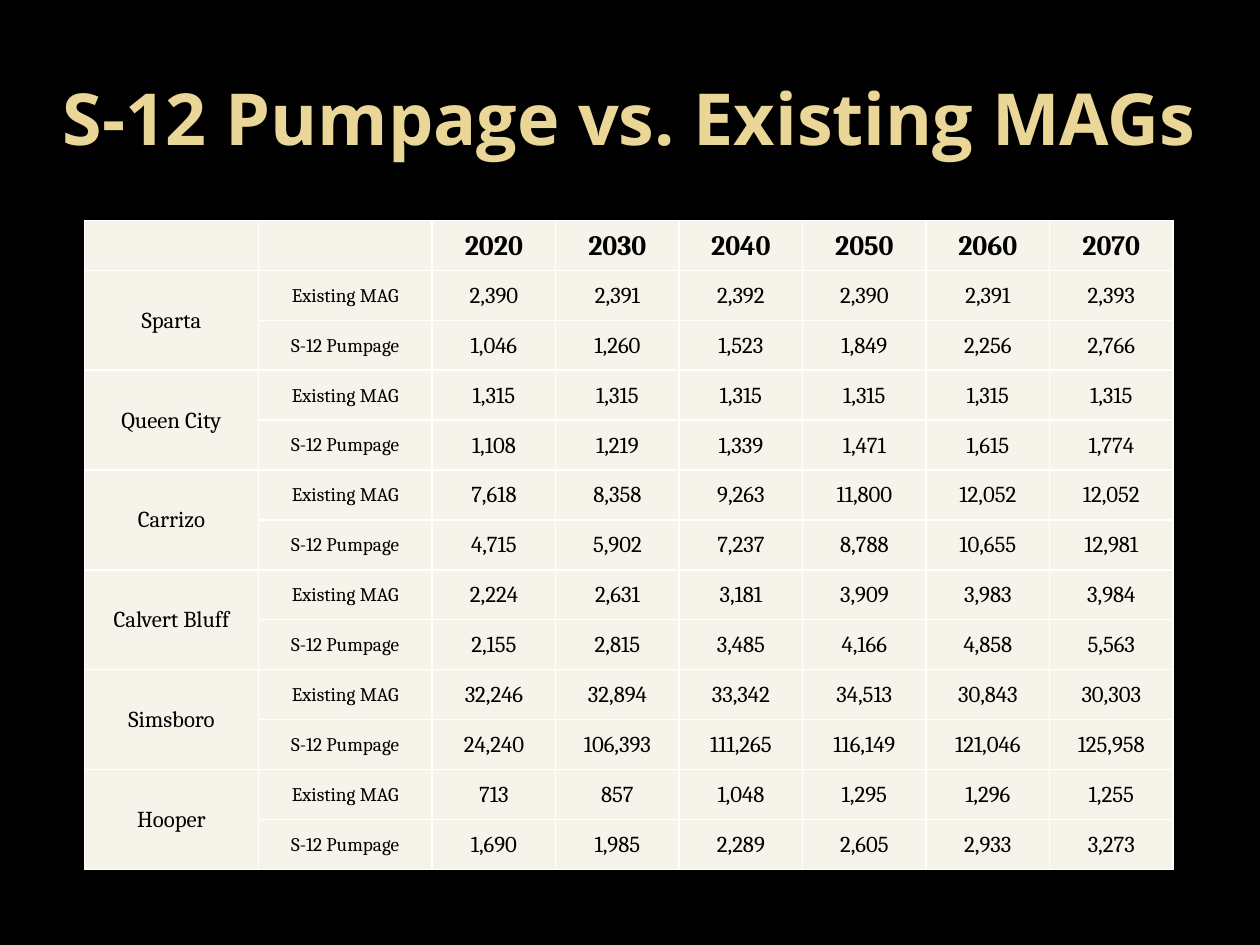
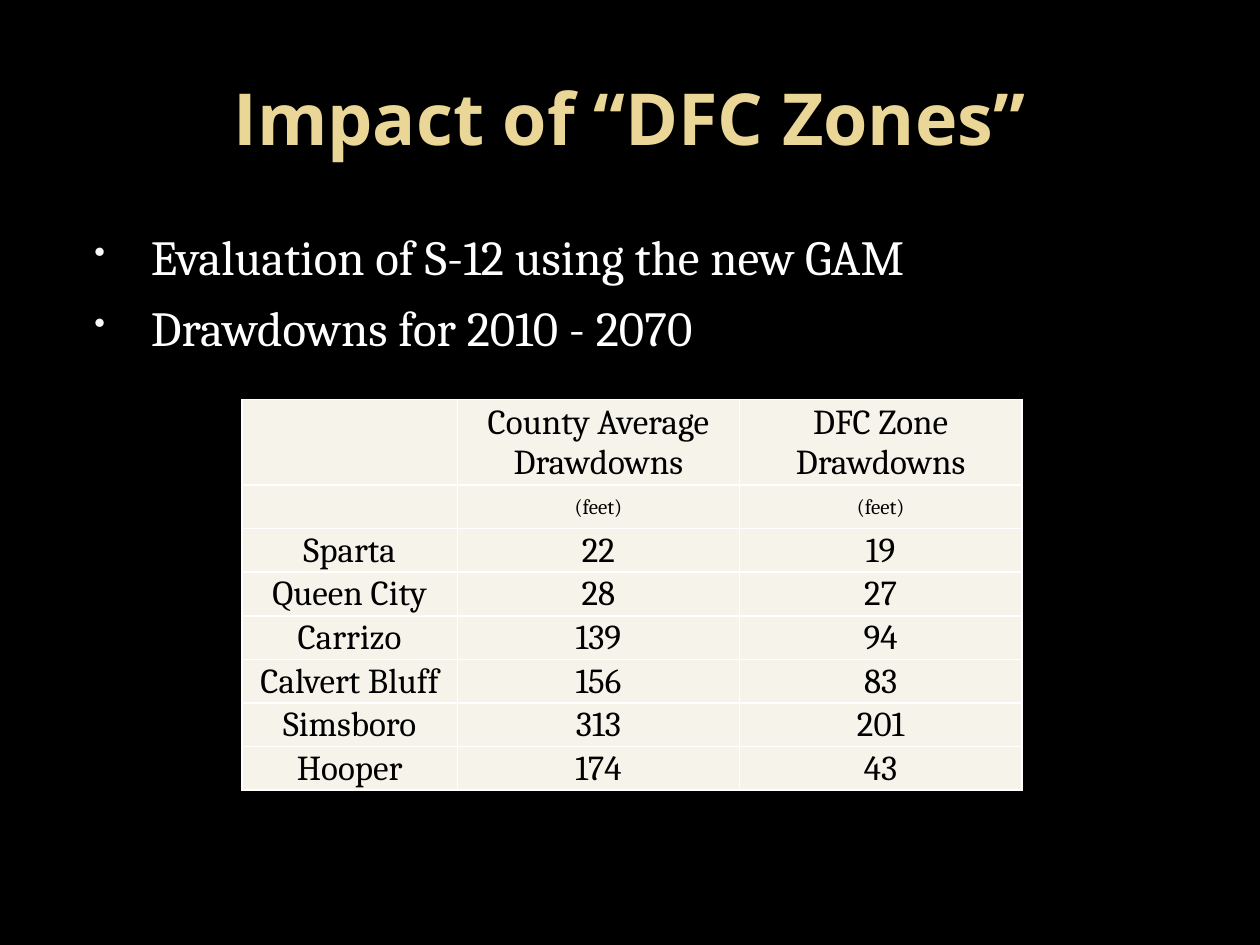
from dataclasses import dataclass

from lxml import etree
from pptx import Presentation
from pptx.dml.color import RGBColor
from pptx.enum.text import MSO_ANCHOR, PP_ALIGN
from pptx.oxml.ns import qn
from pptx.util import Inches, Pt

MIDDLE = MSO_ANCHOR.MIDDLE
CENTER = PP_ALIGN.CENTER


@dataclass(frozen=True)
class Theme:
    back: str = "000000"
    gold: str = "EAD696"
    white: str = "FFFFFF"
    dot: str = "F9F9F9"
    ink: str = "000000"
    cream: str = "F6F3EA"
    head: str = "Open Sans"
    body: str = "Cambria"
    title: int = 41
    point: int = 28
    large: int = 20
    year: int = 16
    value: int = 13
    unit: int = 12
    label: int = 11


theme = Theme()


def write(para, text, size, color, name=theme.body, bold=False):
    run = para.add_run()
    run.text = text
    for key, val in {"size": Pt(size), "name": name, "bold": bold}.items():
        setattr(run.font, key, val)
    run.font.color.rgb = RGBColor.from_string(color)


def grid(slide, rows, sizes, left, top, widths, heights):
    box = [Inches(n) for n in (left, top, sum(widths), sum(heights))]
    table = slide.shapes.add_table(len(rows), len(widths), *box).table
    table.first_row = table.horz_banding = False
    for col, width in zip(table.columns, widths):
        col.width = Inches(width)
    for line, height in zip(table.rows, heights):
        line.height = Inches(height)
    pad = Inches(0.01)
    form = {"margin_left": pad, "margin_top": pad, "margin_right": pad,
            "margin_bottom": 0, "vertical_anchor": MIDDLE}
    for r, row in enumerate(rows):
        for c, text in enumerate(row):
            cell = table.cell(r, c)
            for key, val in form.items():
                setattr(cell, key, val)
            props = cell._tc.get_or_add_tcPr()
            for side in ("lnL", "lnR", "lnT", "lnB"):
                edge = etree.SubElement(props, qn(f"a:{side}"), w=str(Pt(1)))
                fill = etree.SubElement(edge, qn("a:solidFill"))
                etree.SubElement(fill, qn("a:srgbClr"), val=theme.white)
            cell.fill.solid()
            cell.fill.fore_color.rgb = RGBColor.from_string(theme.cream)
            para = cell.text_frame.paragraphs[0]
            para.alignment = CENTER
            if text:
                size = sizes(r, c)
                write(para, text, size, theme.ink, bold=size == theme.year)
    return table


deck = Presentation()
deck.slide_width, deck.slide_height = Inches(10), Inches(7.5)

slides = []
for text, left in (("S-12 Pumpage vs. Existing MAGs", 0), ("Impact of “DFC Zones”", 0.5)):
    slide = deck.slides.add_slide(deck.slide_layouts[6])
    slide.background.fill.solid()
    slide.background.fill.fore_color.rgb = RGBColor.from_string(theme.back)
    box = slide.shapes.add_textbox(Inches(left), Inches(0.3), Inches(10 - 2 * left), Inches(1.25))
    frame = box.text_frame
    frame.word_wrap = True
    frame.vertical_anchor = MIDDLE
    para = frame.paragraphs[0]
    para.alignment = CENTER
    write(para, text, theme.title, theme.gold, theme.head, True)
    slides.append(slide)
pump, zone = slides

flows = {
    "Sparta": ("2,390 2,391 2,392 2,390 2,391 2,393", "1,046 1,260 1,523 1,849 2,256 2,766"),
    "Queen City": ("1,315 1,315 1,315 1,315 1,315 1,315", "1,108 1,219 1,339 1,471 1,615 1,774"),
    "Carrizo": ("7,618 8,358 9,263 11,800 12,052 12,052", "4,715 5,902 7,237 8,788 10,655 12,981"),
    "Calvert Bluff": ("2,224 2,631 3,181 3,909 3,983 3,984", "2,155 2,815 3,485 4,166 4,858 5,563"),
    "Simsboro": ("32,246 32,894 33,342 34,513 30,843 30,303",
                 "24,240 106,393 111,265 116,149 121,046 125,958"),
    "Hooper": ("713 857 1,048 1,295 1,296 1,255", "1,690 1,985 2,289 2,605 2,933 3,273"),
}
rows = [["", "", *(str(year) for year in range(2020, 2080, 10))]]
for name, (mags, pumps) in flows.items():
    rows.append([name, "Existing MAG", *mags.split()])
    rows.append(["", "S-12 Pumpage", *pumps.split()])
table = grid(pump, rows,
             lambda r, c: theme.year if r == 0 else theme.label if c == 1 else theme.value,
             0.67, 1.75, [1.38] * 2 + [0.98] * 6, [5.15 / len(rows)] * len(rows))
for r in range(1, len(rows), 2):
    table.cell(r, 0).merge(table.cell(r + 1, 0))

box = zone.shapes.add_textbox(Inches(0.5), Inches(1.75), Inches(9), Inches(5.15))
frame = box.text_frame
frame.word_wrap = True
points = ("Evaluation of S-12 using the new GAM", "Drawdowns for 2010 - 2070")
for n, text in enumerate(points):
    para = frame.add_paragraph() if n else frame.paragraphs[0]
    para.space_before = Pt(6.6)
    props = para._p.get_or_add_pPr()
    props.set("marL", str(Inches(0.6)))
    props.set("indent", str(Inches(-0.45)))
    tint = etree.SubElement(props, qn("a:buClr"))
    etree.SubElement(tint, qn("a:srgbClr"), val=theme.dot)
    etree.SubElement(props, qn("a:buSzPct"), val="65000")
    etree.SubElement(props, qn("a:buChar"), char="•")
    write(para, text, theme.point, theme.white)

drops = [
    ("", "County Average Drawdowns", "DFC Zone Drawdowns"),
    ("", "(feet)", "(feet)"),
    ("Sparta", "22", "19"),
    ("Queen City", "28", "27"),
    ("Carrizo", "139", "94"),
    ("Calvert Bluff", "156", "83"),
    ("Simsboro", "313", "201"),
    ("Hooper", "174", "43"),
]
grid(zone, drops, lambda r, c: theme.unit if r == 1 else theme.large,
     1.92, 3.17, [1.71, 2.24, 2.24], [0.68] + [2.42 / 7] * 7)

deck.save("out.pptx")
